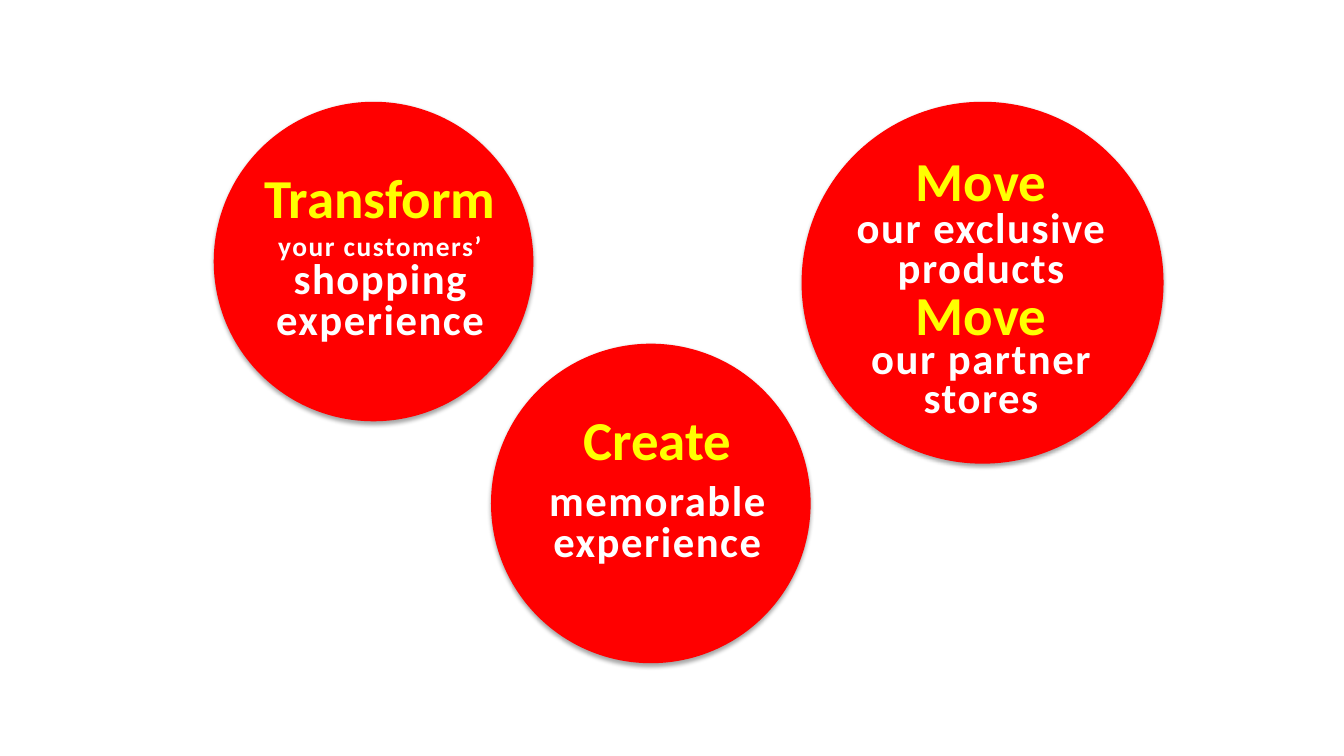
from dataclasses import dataclass

from lxml import etree
from pptx import Presentation
from pptx.dml.color import RGBColor
from pptx.enum.shapes import MSO_SHAPE
from pptx.enum.text import MSO_ANCHOR, PP_ALIGN
from pptx.oxml.ns import qn
from pptx.util import Inches, Pt

OVAL = MSO_SHAPE.OVAL
MIDDLE = MSO_ANCHOR.MIDDLE
CENTER = PP_ALIGN.CENTER
BLANK_LAYOUT = 6


@dataclass(frozen=True)
class Theme:
    font: str = "Calibri"
    circle: RGBColor = RGBColor(0xFF, 0x00, 0x00)
    keyword: RGBColor = RGBColor(0xFF, 0xFF, 0x00)
    message: RGBColor = RGBColor(0xFF, 0xFF, 0xFF)
    keyword_size: float = 39.2
    message_size: float = 30.5
    small_size: float = 19.6
    keyword_leading: float = 32.6
    message_tracking: float = 1.1


THEME = Theme()
TEXT_WIDTH = 2.78
KEYWORD_HEIGHT = 0.72
MESSAGE_HEIGHT = 1.29


def add_text(slide, lines, left, top, height, *, color, leading, tracking=0):
    """Place centred lines, each given as (wording, size)."""
    box = slide.shapes.add_textbox(
        Inches(left), Inches(top), Inches(TEXT_WIDTH), Inches(height))
    frame = box.text_frame
    frame.word_wrap = True
    frame.vertical_anchor = MIDDLE
    frame.margin_left = frame.margin_right = Inches(0.11)
    frame.margin_top = frame.margin_bottom = Inches(0.05)
    for index, (wording, size) in enumerate(lines):
        paragraph = frame.add_paragraph() if index else frame.paragraphs[0]
        paragraph.alignment = CENTER
        paragraph.line_spacing = Pt(leading)
        run = paragraph.add_run()
        run.text = wording
        font = run.font
        font.name, font.size, font.bold = THEME.font, Pt(size), True
        font.color.rgb = color
        if tracking:
            font._element.set("spc", str(round(tracking * 100)))


def add_soft_shadow(shape):
    shape.shadow.inherit = False
    effects = shape._element.spPr.find(qn("a:effectLst"))
    shadow = etree.SubElement(
        effects, qn("a:outerShdw"), blurRad=str(Pt(3.1)), dist=str(Pt(1.8)),
        dir="5400000", algn="ctr", rotWithShape="0")
    black = etree.SubElement(shadow, qn("a:srgbClr"), val="000000")
    etree.SubElement(black, qn("a:alpha"), val="35000")


def add_circle(slide, left, top, diameter, text_inset, statements, leading):
    """Draw a circle; statements hold keyword, its drop, lines, their drop."""
    circle = slide.shapes.add_shape(
        OVAL, Inches(left), Inches(top), Inches(diameter), Inches(diameter))
    circle.fill.solid()
    circle.fill.fore_color.rgb = THEME.circle
    circle.line.fill.background()
    add_soft_shadow(circle)

    text_left = left + text_inset
    for keyword, keyword_drop, message, message_drop in statements:
        add_text(slide, message, text_left, top + message_drop, MESSAGE_HEIGHT,
                 color=THEME.message, leading=leading,
                 tracking=THEME.message_tracking)
        add_text(slide, [(keyword, THEME.keyword_size)], text_left,
                 top + keyword_drop, KEYWORD_HEIGHT,
                 color=THEME.keyword, leading=THEME.keyword_leading)


def main():
    deck = Presentation()
    deck.slide_width, deck.slide_height = Inches(13.33), Inches(7.5)
    slide = deck.slides.add_slide(deck.slide_layouts[BLANK_LAYOUT])
    small, large = THEME.small_size, THEME.message_size

    # Two equal circles with one statement each
    transform = [("your customers’", small), ("shopping", large),
                 ("experience", large)]
    create = [("memorable", large), ("experience", large)]
    for left, top, keyword, message in [(2.12, 1.01, "Transform", transform),
                                        (4.87, 3.41, "Create", create)]:
        add_circle(slide, left, top, 3.17, 0.26,
                   [(keyword, 0.68, message, 1.15)], leading=29.4)

    # Larger circle with two statements
    products = [("our exclusive", large), ("products", large)]
    stores = [("our partner", large), ("stores", large)]
    add_circle(slide, 7.95, 1.01, 3.59, 0.39,
               [("Move", 0.51, products, 0.85), ("Move", 1.84, stores, 2.14)],
               leading=28.3)

    deck.save("out.pptx")


if __name__ == "__main__":
    main()
